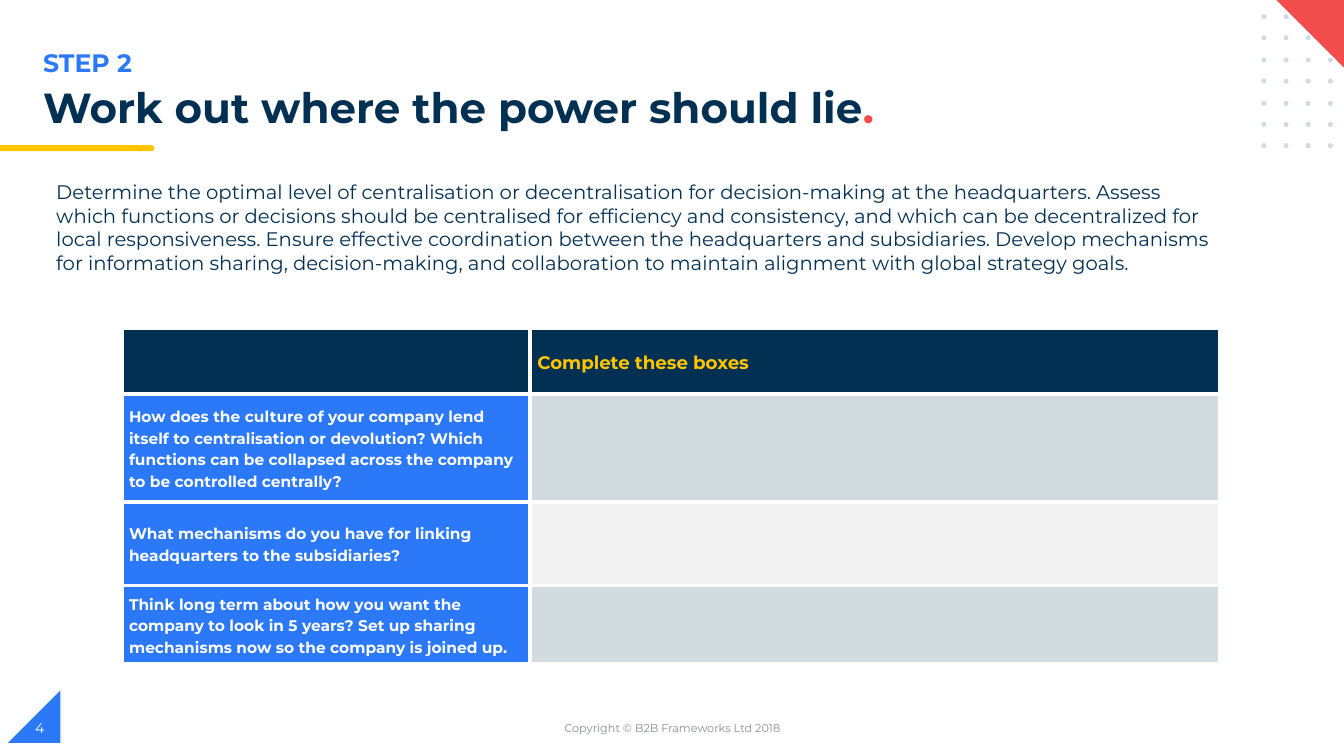
import pptx
import pptx.dml.color
import pptx.enum.shapes
import pptx.enum.text
import pptx.oxml
import pptx.oxml.ns
import pptx.util

PX = 9144
FONT = "Montserrat"
COLORS = {
    "navy": "023053", "blue": "2B79F8", "red": "F24E4E", "yellow": "FFC600",
    "mist": "D1DBE0", "pale": "F2F2F2", "grey": "888C97", "white": "FFFFFF",
}
SHAPES = pptx.enum.shapes.MSO_SHAPE
MIDDLE = pptx.enum.text.MSO_ANCHOR.MIDDLE
CENTER = pptx.enum.text.PP_ALIGN.CENTER

DESCRIPTION = (
    "Determine the optimal level of centralisation or decentralisation for "
    "decision-making at the headquarters. Assess which functions or decisions "
    "should be centralised for efficiency and consistency, and which can be "
    "decentralized for local responsiveness. Ensure effective coordination between "
    "the headquarters and subsidiaries. Develop mechanisms for information sharing, "
    "decision-making, and collaboration to maintain alignment with global strategy goals."
)
QUESTIONS = [
    ("How does the culture of your company lend itself to centralisation or devolution? "
     "Which functions can be collapsed across the company to be controlled centrally?",
     107, "mist"),
    ("What mechanisms do you have for linking headquarters to the subsidiaries?",
     83, "pale"),
    ("Think long term about how you want the company to look in 5 years? "
     "Set up sharing mechanisms now so the company is joined up.",
     78, "mist"),
]


def px(*lengths):
    """Turn px lengths into EMU."""
    return [pptx.util.Emu(length * PX) for length in lengths]


def apply(target, **values):
    """Set each given format value on the target."""
    for name, value in values.items():
        setattr(target, name, value)


def paint(fill, color):
    """Fill with one solid named colour."""
    fill.solid()
    fill.fore_color.rgb = pptx.dml.color.RGBColor.from_string(COLORS[color])


def add_run(paragraph, text, size, color, bold=False):
    """Append a formatted run to the paragraph."""
    run = paragraph.add_run()
    run.text = text
    apply(run.font, name=FONT, size=pptx.util.Pt(size), bold=bold)
    paint(run.font.fill, color)


def add_block(slide, box, kind, color, rotation=0):
    """Draw a plain filled shape in the box."""
    block = slide.shapes.add_shape(kind, *px(*box))
    paint(block.fill, color)
    block.line.fill.background()
    block.shadow.inherit = False
    block.rotation = rotation


def add_text(slide, box, runs, frame=None, paragraph=None):
    """Write one paragraph of runs in the box."""
    text_frame = slide.shapes.add_textbox(*px(*box)).text_frame
    apply(text_frame, word_wrap=True, **(frame or {}))
    line = text_frame.paragraphs[0]
    apply(line, **(paragraph or {}))
    for run in runs:
        add_run(line, *run)


def draw_corner(slide, left, top):
    """Draw the dot grid and the red corner over it."""
    for row in range(7):
        for column in range(4):
            dot = (left + 22 * column, top + round(21.4 * row), 5, 5)
            add_block(slide, dot, SHAPES.OVAL, "mist")
    add_block(slide, (left + 14, top - 15, 72, 72), SHAPES.RIGHT_TRIANGLE, "red", 180)


def draw_heading(slide, left, top, width):
    """Write the step label and title with the yellow rule below."""
    add_block(slide, (134, top + 102, 19, 6), SHAPES.FLOWCHART_TERMINATOR, "yellow")
    add_block(slide, (0, top + 102, 141, 6), SHAPES.RECTANGLE, "yellow")
    add_text(slide, (left, top, 669, 40), [("STEP 2", 18, "blue", True)])
    title = [("Work out where the power should lie", 30, "navy", True),
             (".", 30, "red", True)]
    add_text(slide, (left, top + 40, width, 56), title, paragraph={"line_spacing": 0.9})


def draw_footer(slide, left, top):
    """Draw the page number on its triangle and the copyright line."""
    add_block(slide, (left, top, 52, 52), SHAPES.RIGHT_TRIANGLE, "blue", 270)
    add_text(slide, (left + 434, top + 17, 450, 40),
             [("Copyright © B2B Frameworks Ltd 2018", 8, "grey")],
             {"vertical_anchor": MIDDLE}, {"alignment": CENTER})
    add_text(slide, (left + 17, top + 17, 300, 40), [("4", 10, "white")],
             {"vertical_anchor": MIDDLE})


def border_cell(cell):
    """Give the cell white borders on every side."""
    properties = cell._tc.get_or_add_tcPr()
    for position, side in enumerate(("lnL", "lnR", "lnT", "lnB")):
        border = pptx.oxml.parse_xml(
            f'<a:{side} {pptx.oxml.ns.nsdecls("a")} w="38100"><a:solidFill>'
            f'<a:srgbClr val="{COLORS["white"]}"/></a:solidFill></a:{side}>')
        properties.insert(position, border)


def fill_cell(cell, fill, text="", size=11, color="white"):
    """Fill and border a cell and write its bold text."""
    paint(cell.fill, fill)
    border_cell(cell)
    inset, none = px(7, 0)
    apply(cell, vertical_anchor=MIDDLE, margin_left=inset, margin_right=inset,
          margin_top=none, margin_bottom=none)
    if text:
        paragraph = cell.text_frame.paragraphs[0]
        paragraph.line_spacing = 1.15
        add_run(paragraph, text, size, color, True)


def draw_worksheet(slide, left, top, column_widths):
    """Draw the table of questions with boxes to complete."""
    heights = [65] + [height for _, height, _ in QUESTIONS]
    box = px(left, top, sum(column_widths), sum(heights))
    worksheet = slide.shapes.add_table(len(heights), len(column_widths), *box).table
    for column, width in zip(worksheet.columns, px(*column_widths)):
        column.width = width
    for row, height in zip(worksheet.rows, px(*heights)):
        row.height = height
    fill_cell(worksheet.cell(0, 0), "navy")
    fill_cell(worksheet.cell(0, 1), "navy", "Complete these boxes", 13, "yellow")
    for row, (question, _, answer_fill) in enumerate(QUESTIONS, 1):
        fill_cell(worksheet.cell(row, 0), "blue", question)
        fill_cell(worksheet.cell(row, 1), answer_fill)


def main():
    """Build the slide and save it."""
    deck = pptx.Presentation()
    deck.slide_width, deck.slide_height = px(1333, 750)
    slide = deck.slides.add_slide(deck.slide_layouts[6])
    draw_corner(slide, 1251, 14)
    draw_heading(slide, 33, 42, 1115)
    draw_footer(slide, 8, 685)
    draw_worksheet(slide, 121, 326, (405, 684))
    add_text(slide, (46, 174, 1180, 104), [(DESCRIPTION, 14, "navy")])
    deck.save("out.pptx")


if __name__ == "__main__":
    main()
